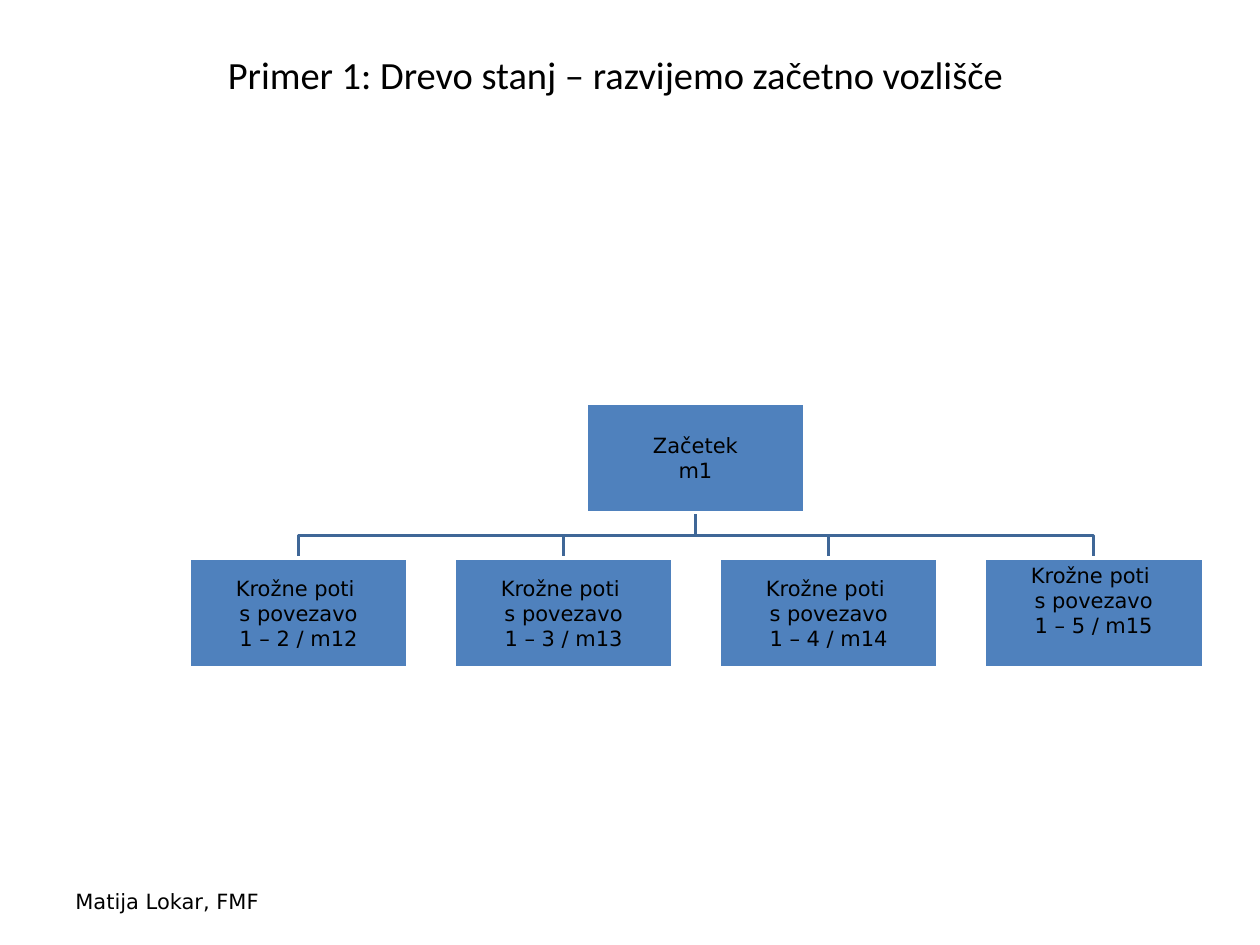
from copy import deepcopy

from pptx import Presentation
from pptx import util as u
from pptx.dml.color import RGBColor
from pptx.enum import shapes, text
from pptx.oxml.ns import qn

BLACK = RGBColor(0, 0, 0)
WHITE = RGBColor(255, 255, 255)
NODE_BLUE = RGBColor(0x4F, 0x81, 0xBD)
LINE_BLUE = RGBColor(0x3F, 0x67, 0x97)

NODE_W, NODE_H = 1.74, 0.87
ROOT_X, ROOT_Y = 4.65, 3.2
CHILD_X, CHILD_Y, CHILD_STEP = 1.5, 4.43, 2.1035
INSET = 0.01
LINE_H = 0.2


def write(sp, content, size, font, align, frame=None):
    tf = sp.text_frame
    settings = {"word_wrap": True, "vertical_anchor": text.MSO_ANCHOR.MIDDLE}
    for name, value in {**settings, **(frame or {})}.items():
        setattr(tf, name, value)
    p = tf.paragraphs[0]
    p.text = content
    p.alignment = align
    for r in p.runs:
        for name, value in {"size": u.Pt(size), "name": font}.items():
            setattr(r.font, name, value)
        r.font.color.rgb = BLACK
    for br in p._p.findall(qn("a:br")):
        br.append(deepcopy(p.runs[0]._r.rPr))


def add_label(s, box, content, size, font, align):
    sp = s.shapes.add_textbox(*map(u.Inches, box))
    write(sp, content, size, font, align)


def add_node(s, x, y, content, bottom=INSET):
    box = map(u.Inches, (x, y, NODE_W, NODE_H))
    sp = s.shapes.add_shape(shapes.MSO_SHAPE.RECTANGLE, *box)
    sp.shadow.inherit = False
    sp.fill.solid()
    sp.fill.fore_color.rgb = NODE_BLUE
    sp.line.color.rgb = WHITE
    sp.line.width = u.Pt(2)
    frame = {f"margin_{side}": u.Inches(INSET) for side in ("left", "top", "right")}
    frame["margin_bottom"] = u.Inches(bottom)
    write(sp, content, 12, "DejaVu Sans", text.PP_ALIGN.CENTER, frame)


def add_branch(s, child_x):
    start_x, end_x = ROOT_X + NODE_W / 2, child_x + NODE_W / 2
    start_y = ROOT_Y + NODE_H
    mid_y = (start_y + CHILD_Y) / 2
    fb = s.shapes.build_freeform(u.Inches(start_x), u.Inches(start_y))
    points = [(start_x, mid_y), (end_x, mid_y), (end_x, CHILD_Y)]
    fb.add_line_segments([(u.Inches(x), u.Inches(y)) for x, y in points], close=False)
    sp = fb.convert_to_shape()
    sp.shadow.inherit = False
    sp.fill.background()
    sp.line.color.rgb = LINE_BLUE
    sp.line.width = u.Pt(2)


def main():
    prs = Presentation()
    prs.slide_width, prs.slide_height = u.Inches(10), u.Inches(7.5)
    s = prs.slides.add_slide(prs.slide_layouts[6])

    add_label(s, (0.51, 0.21, 8.75, 0.75),
              "Primer 1: Drevo stanj – razvijemo začetno vozlišče",
              22, "Calibri", text.PP_ALIGN.CENTER)

    targets = range(2, 6)
    child_xs = [CHILD_X + i * CHILD_STEP for i in range(len(targets))]
    for x in reversed(child_xs):
        add_branch(s, x)
    add_node(s, ROOT_X, ROOT_Y, "Začetek\nm1")
    for x, n in zip(child_xs, targets):
        bottom = INSET + LINE_H if n == targets[-1] else INSET
        add_node(s, x, CHILD_Y, f"Krožne poti \ns povezavo\n1 – {n} / m1{n}", bottom)

    add_label(s, (0.5, 6.95, 2.33, 0.4), "Matija Lokar, FMF",
              12, "DejaVu Sans", text.PP_ALIGN.LEFT)
    prs.save("out.pptx")


if __name__ == "__main__":
    main()
